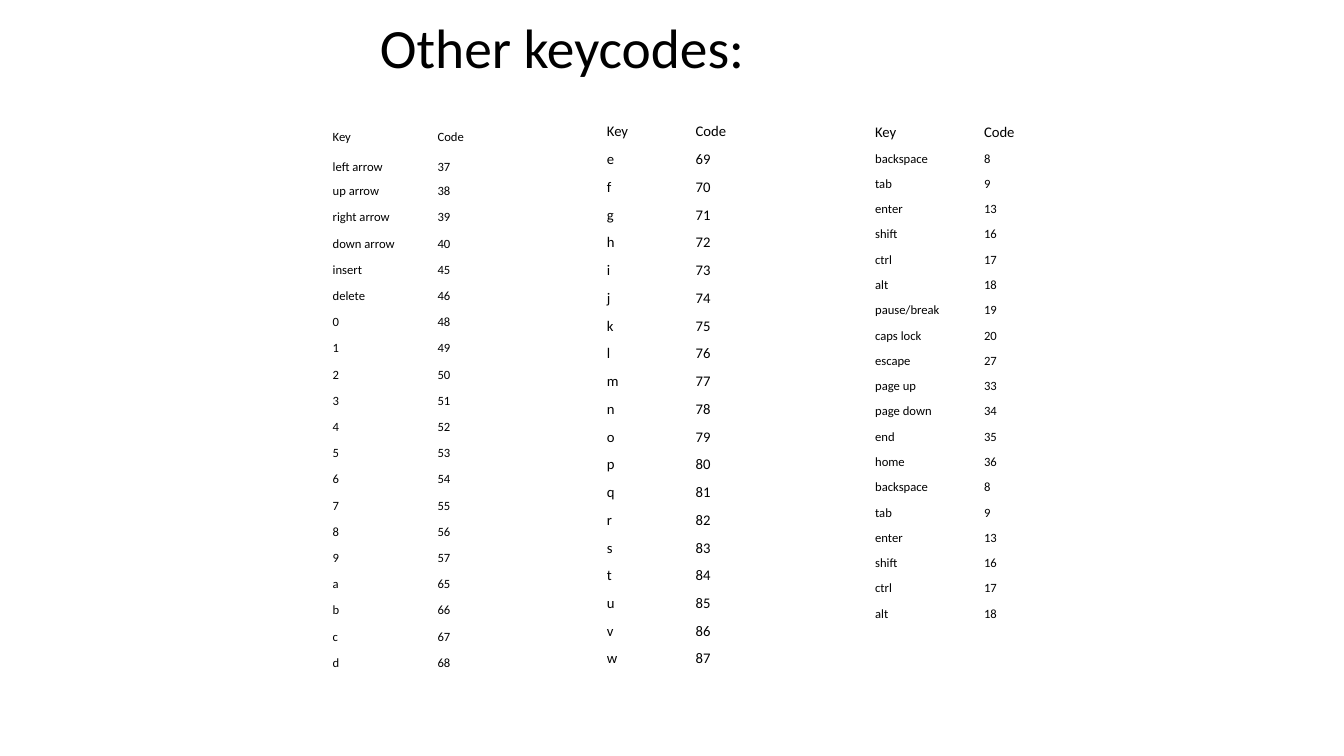
from collections import namedtuple

from pptx import Presentation
from pptx.dml.color import RGBColor
from pptx.enum.text import MSO_ANCHOR as Anchor
from pptx.util import Pt

# Content: each pair is a key and its code; a line break starts a new paragraph
TITLE = "Other keycodes:"
HEADER = ("Key", "Code")
ARROWS_AND_DIGITS = [
    ("Key\nleft arrow", "Code\n37"), ("up arrow", 38), ("right arrow", 39),
    ("down arrow", 40), ("insert", 45), ("delete", 46),
    *zip("0123456789", range(48, 58)), *zip("abcd", range(65, 69)),
]
LETTERS = [HEADER, *zip("efghijklmnopqrstuvw", range(69, 88))]
MODIFIERS = [("backspace", 8), ("tab", 9), ("enter", 13),
             ("shift", 16), ("ctrl", 17), ("alt", 18)]
CONTROLS = [
    HEADER, *MODIFIERS,
    ("pause/break", 19), ("caps lock", 20), ("escape", 27), ("page up", 33),
    ("page down", 34), ("end", 35), ("home", 36), *MODIFIERS,
]

# Theme: colours in hex, sizes in points
Theme = namedtuple("Theme", "font ink title large small gap")
THEME = Theme("Calibri", RGBColor.from_string("000000"), 39.6, 10.5, 9, 11)

# Layout in px, 100 to the inch
PX = 9144
PAGE = (1333, 750)
TITLE_BOX = (367, 17, 721, 67)
WIDE, TIGHT = (10, 5), (5, 3)  # side and top/bottom cell margins

KeyTable = namedtuple(
    "KeyTable", "rows left top column head_height row_height head_size size margins")
TABLES = [
    KeyTable(ARROWS_AND_DIGITS, 325, 125, 104, 52, 26, THEME.small, THEME.small, TIGHT),
    KeyTable(LETTERS, 592, 117, 88, 27, 27, THEME.large, THEME.large, WIDE),
    KeyTable(CONTROLS, 858, 117, 108, 28, 25, THEME.large, THEME.small, WIDE),
]


def set_all(target, values):
    for name, value in values.items():
        setattr(target, name, value)


def write(frame, text, size, paragraph_format):
    for index, line in enumerate(text.split("\n")):
        para = frame.add_paragraph() if index else frame.paragraphs[0]
        set_all(para, paragraph_format)
        if index:
            para.space_before = Pt(THEME.gap)
        span = para.add_run()
        span.text = line
        set_all(span.font, {"name": THEME.font, "size": Pt(size), "bold": False})
        span.font.color.rgb = THEME.ink


def add_key_table(page, plan):
    body_rows = len(plan.rows) - 1
    height = plan.head_height + body_rows * plan.row_height
    bounds = (plan.left, plan.top, 2 * plan.column, height)
    table = page.shapes.add_table(
        len(plan.rows), 2, *(value * PX for value in bounds)).table
    set_all(table, {"first_row": False, "horz_banding": False})
    for column in table.columns:
        column.width = plan.column * PX

    side, edge = (margin * PX for margin in plan.margins)
    cell_format = {
        "margin_left": side, "margin_right": side,
        "margin_top": edge, "margin_bottom": edge,
        "vertical_anchor": Anchor.MIDDLE,
    }
    for row_index, pair in enumerate(plan.rows):
        is_body = row_index > 0
        table.rows[row_index].height = PX * (
            plan.row_height if is_body else plan.head_height)
        for column_index, value in enumerate(pair):
            cell = table.cell(row_index, column_index)
            set_all(cell, cell_format)
            cell.fill.background()
            write(cell.text_frame, str(value),
                  plan.size if is_body else plan.head_size, {})


def main():
    deck = Presentation()
    set_all(deck, {"slide_width": PAGE[0] * PX, "slide_height": PAGE[1] * PX})
    page = deck.slides.add_slide(deck.slide_layouts[6])

    # Title
    box = page.shapes.add_textbox(*(value * PX for value in TITLE_BOX))
    set_all(box.text_frame, {"word_wrap": True, "vertical_anchor": Anchor.MIDDLE})
    write(box.text_frame, TITLE, THEME.title, {"line_spacing": 0.9})

    # Three keycode tables
    for plan in TABLES:
        add_key_table(page, plan)

    deck.save("out.pptx")


if __name__ == "__main__":
    main()
